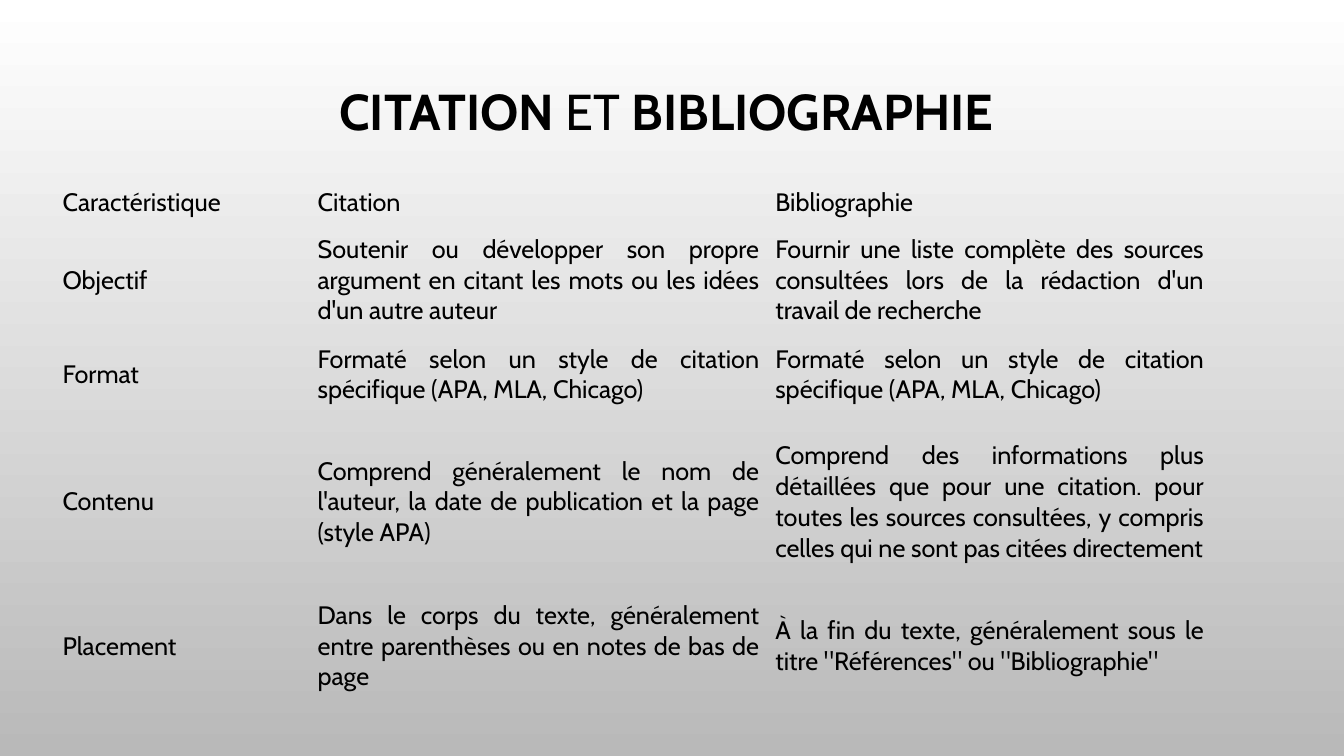
from dataclasses import dataclass

import pptx
import pptx.dml.color
import pptx.enum.text
import pptx.oxml
import pptx.oxml.ns
import pptx.util


@dataclass(frozen=True)
class Theme:
    font: str = "Cabin"
    ink: str = "000000"
    sky: str = "FFFFFF"
    ground: str = "B9B9B9"
    title_size: int = 36
    body_size: int = 18


THEME = Theme()
SLIDE_WIDTH, SLIDE_HEIGHT = 13.33, 7.5
TITLE_BOX = (1, 0.68, 11.33, 0.9)
TABLE_BOX = (0.54, 1.79, 11.48, 5.17)

# Shares of the table box, in hundredths of an inch
COLUMN_SHARES = (253, 454, 441)
ROW_SHARES = (44, 110, 77, 176, 110)

TITLE_RUNS = (("CITATION", True), (" ET ", False), ("BIBLIOGRAPHIE ", True))
STYLE_RULE = "Formaté selon un style de citation spécifique (APA, MLA, Chicago)"
COMPARISON = (
    ("Caractéristique", "Citation", "Bibliographie"),
    ("Objectif",
     "Soutenir ou développer son propre argument en citant les mots "
     "ou les idées d'un autre auteur",
     "Fournir une liste complète des sources consultées lors de la "
     "rédaction d'un travail de recherche"),
    ("Format", STYLE_RULE, STYLE_RULE),
    ("Contenu",
     "Comprend généralement le nom de l'auteur, la date de publication "
     "et la page (style APA)",
     "Comprend des informations plus détaillées que pour une citation. "
     "pour toutes les sources consultées, y compris celles qui ne sont "
     "pas citées directement"),
    ("Placement",
     "Dans le corps du texte, généralement entre parenthèses ou en notes "
     "de bas de page",
     "À la fin du texte, généralement sous le titre \"Références\" ou "
     "\"Bibliographie\""),
)


def color(code):
    return pptx.dml.color.RGBColor.from_string(code)


def lengths(box):
    return [pptx.util.Inches(value) for value in box]


def format_paragraph(para, size, alignment):
    para.alignment = alignment
    para.font.name = THEME.font
    para.font.size = pptx.util.Pt(size)
    para.font.color.rgb = color(THEME.ink)


def paint_background(page):
    fill = page.background.fill
    fill.gradient()
    fill.gradient_angle = 270
    for stop, code in zip(fill.gradient_stops, (THEME.sky, THEME.ground)):
        stop.color.rgb = color(code)


def add_title(page, box):
    title = page.shapes.title
    title.left, title.top, title.width, title.height = lengths(box)
    frame = title.text_frame
    frame.word_wrap = True
    frame.auto_size = pptx.enum.text.MSO_AUTO_SIZE.NONE
    frame.vertical_anchor = pptx.enum.text.MSO_ANCHOR.MIDDLE
    para = frame.paragraphs[0]
    para.line_spacing = 0.9
    format_paragraph(para, THEME.title_size, pptx.enum.text.PP_ALIGN.CENTER)
    for text, bold in TITLE_RUNS:
        span = para.add_run()
        span.text = text
        span.font.bold = bold


def clear_cell(cell):
    # Borders come before the fill in the cell properties
    properties = cell._tc.get_or_add_tcPr()
    for side in ("lnL", "lnR", "lnT", "lnB"):
        properties.append(pptx.oxml.parse_xml(
            f'<a:{side} {pptx.oxml.ns.nsdecls("a")} w="0"><a:noFill/></a:{side}>'))
    cell.fill.background()


def fill_cell(cell, text):
    clear_cell(cell)
    cell.vertical_anchor = pptx.enum.text.MSO_ANCHOR.MIDDLE
    cell.margin_left = cell.margin_right = pptx.util.Inches(0.08)
    cell.margin_top = cell.margin_bottom = pptx.util.Inches(0.04)
    cell.text = text
    format_paragraph(cell.text_frame.paragraphs[0], THEME.body_size,
                     pptx.enum.text.PP_ALIGN.JUSTIFY)


def add_comparison(page, box):
    left, top, width, height = lengths(box)
    table = page.shapes.add_table(len(ROW_SHARES), len(COLUMN_SHARES),
                                  left, top, width, height).table
    table.first_row = table.horz_banding = False
    for column, share in zip(table.columns, COLUMN_SHARES):
        column.width = int(width * share / sum(COLUMN_SHARES))
    for row, share, texts in zip(table.rows, ROW_SHARES, COMPARISON):
        row.height = int(height * share / sum(ROW_SHARES))
        for cell, text in zip(row.cells, texts):
            fill_cell(cell, text)


def main():
    deck = pptx.Presentation()
    deck.slide_width, deck.slide_height = lengths((SLIDE_WIDTH, SLIDE_HEIGHT))
    page = deck.slides.add_slide(deck.slide_layouts.get_by_name("Title Only"))
    paint_background(page)
    add_title(page, TITLE_BOX)
    add_comparison(page, TABLE_BOX)
    deck.save("out.pptx")


if __name__ == "__main__":
    main()
